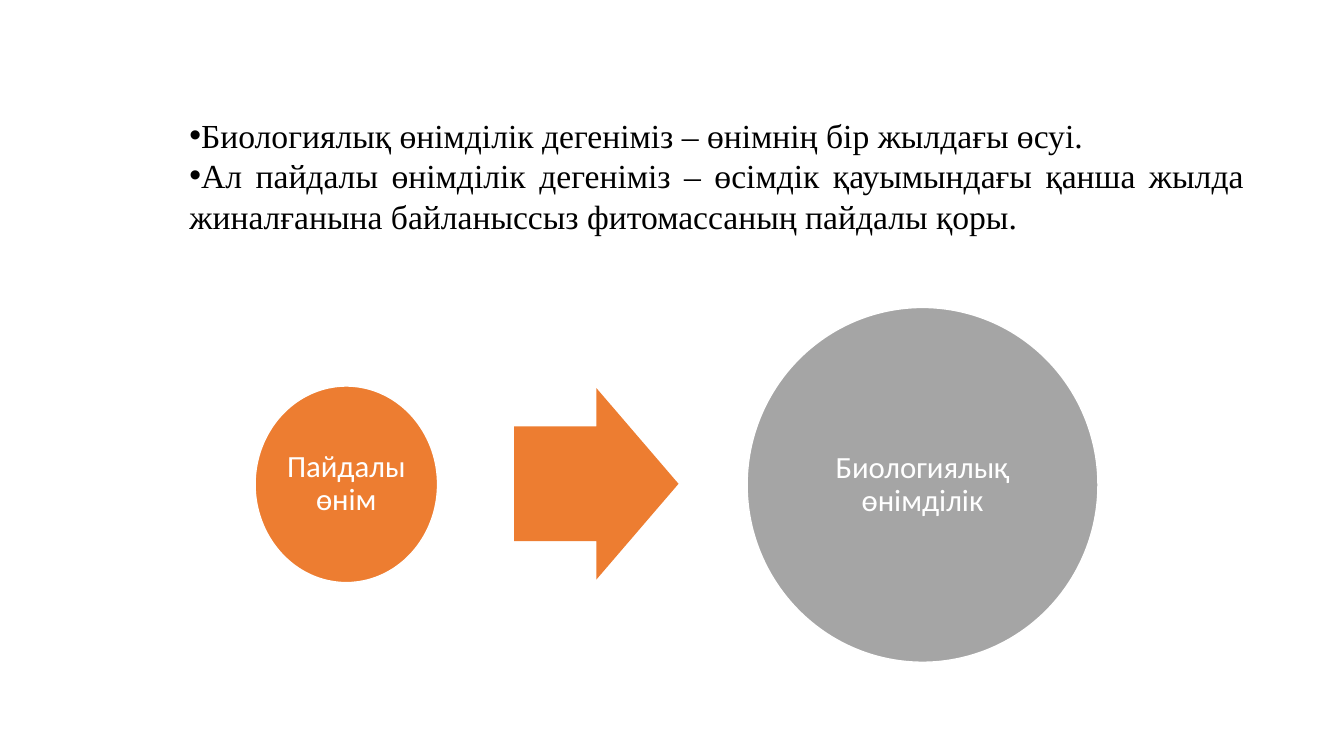
from lxml import etree
from pptx import Presentation
from pptx.dml.color import RGBColor
from pptx.enum import shapes, text
from pptx.oxml.ns import qn
from pptx.util import Inches, Pt

ORANGE = RGBColor(0xED, 0x7D, 0x31)
GRAY = RGBColor(0xA5, 0xA5, 0xA5)
WHITE = RGBColor(0xFF, 0xFF, 0xFF)
BLACK = RGBColor(0x00, 0x00, 0x00)

DEFINITIONS = [
    "Биологиялық өнімділік дегеніміз – өнімнің бір жылдағы өсуі. ",
    "Ал пайдалы өнімділік дегеніміз – өсімдік қауымындағы қанша жылда "
    "жиналғанына байланыссыз фитомассаның пайдалы қоры. ",
]
CIRCLES = [
    ("Пайдалы өнім", (2.53, 3.83, 1.81, 1.95), ORANGE),
    ("Биологиялық өнімділік", (7.41, 3.05, 3.48, 3.52), GRAY),
]
ARROW_BOX = (5.1, 3.85, 1.63, 1.9)


def inches(box):
    return [Inches(length) for length in box]


def write(paragraph, wording, font_name, size, color):
    run = paragraph.add_run()
    run.text = wording
    run.font.name = font_name
    run.font.size = Pt(size)
    run.font.color.rgb = color


def add_bullet(paragraph):
    """Put a bullet before the paragraph, without a hanging indent."""
    properties = paragraph._p.get_or_add_pPr()
    for key in ("marL", "indent"):
        properties.set(key, "0")
    etree.SubElement(properties, qn("a:buFont")).set("typeface", "Arial")
    etree.SubElement(properties, qn("a:buChar")).set("char", "•")


def add_definitions(slide, box):
    frame = slide.shapes.add_textbox(*inches(box)).text_frame
    frame.word_wrap = True
    frame.auto_size = text.MSO_AUTO_SIZE.SHAPE_TO_FIT_TEXT
    for index, definition in enumerate(DEFINITIONS):
        paragraph = frame.add_paragraph() if index else frame.paragraphs[0]
        paragraph.alignment = text.PP_ALIGN.JUSTIFY
        add_bullet(paragraph)
        write(paragraph, definition, "Times New Roman", 24, BLACK)


def add_filled(slide, kind, box, color):
    filled = slide.shapes.add_shape(kind, *inches(box))
    filled.shadow.inherit = False
    filled.fill.solid()
    filled.fill.fore_color.rgb = color
    filled.line.fill.background()
    return filled


def add_circle(slide, label, box, color):
    circle = add_filled(slide, shapes.MSO_SHAPE.OVAL, box, color)
    circle.line.color.rgb = WHITE
    circle.line.width = Pt(1)
    frame = circle.text_frame
    frame.word_wrap = True
    frame.vertical_anchor = text.MSO_ANCHOR.MIDDLE
    for side in ("left", "top", "right", "bottom"):
        setattr(frame, f"margin_{side}", Inches(0.03))
    paragraph = frame.paragraphs[0]
    paragraph.alignment = text.PP_ALIGN.CENTER
    paragraph.line_spacing = 0.9
    write(paragraph, label, "Calibri", 22, WHITE)


def add_arrow(slide, box):
    arrow = add_filled(slide, shapes.MSO_SHAPE.RIGHT_ARROW, box, ORANGE)
    arrow.adjustments[0] = 0.6
    arrow.adjustments[1] = 0.5


def main():
    deck = Presentation()
    deck.slide_width = Inches(13.33)
    deck.slide_height = Inches(7.5)
    slide = deck.slides.add_slide(deck.slide_layouts.get_by_name("Blank"))
    for label, box, color in CIRCLES:
        add_circle(slide, label, box, color)
    add_arrow(slide, ARROW_BOX)
    add_definitions(slide, (1.78, 1.09, 10.66, 1.31))
    deck.save("out.pptx")


if __name__ == "__main__":
    main()
